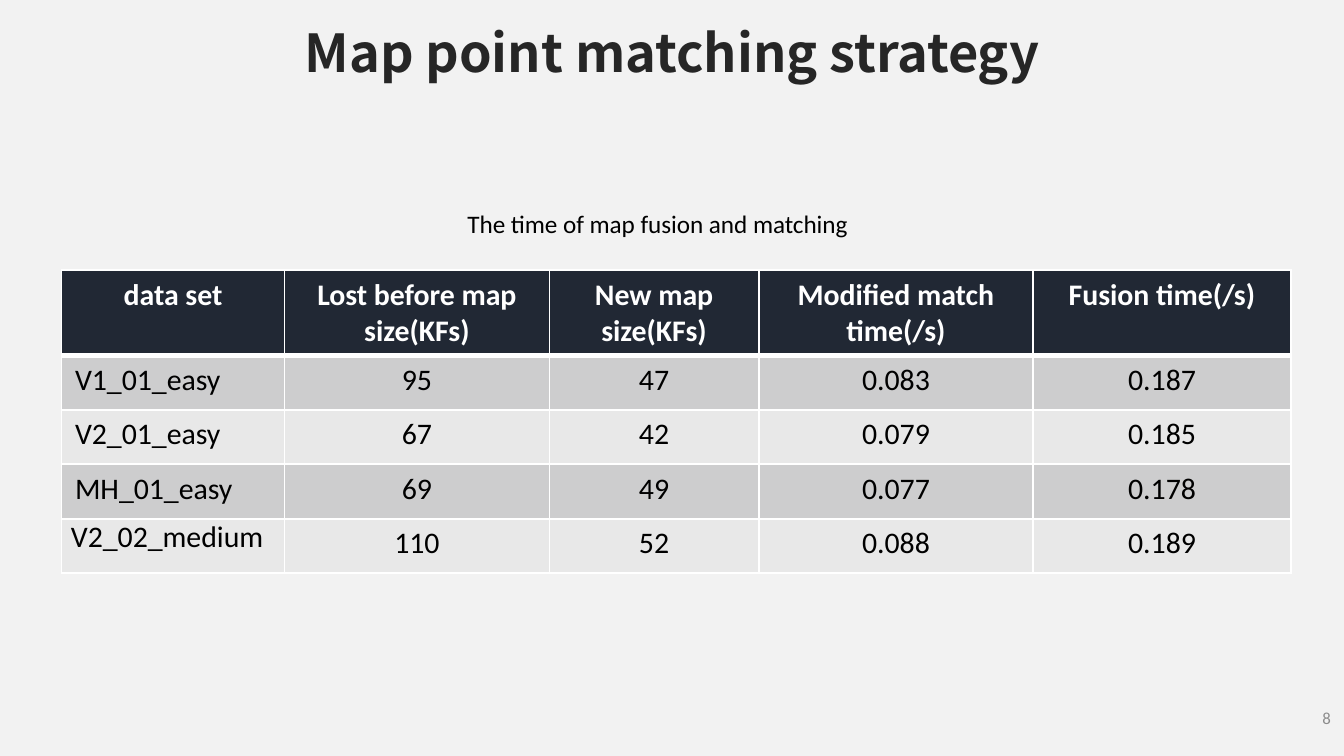
from lxml import etree
from pptx import Presentation
from pptx import util as u
from pptx.dml.color import RGBColor
from pptx.enum import text
from pptx.oxml import ns

INK = {"back": "F2F2F2", "title": "262626", "text": "000000", "page": "8C8C8C",
       "head": "212834", "odd": "CDCDCE", "even": "E8E8E8", "white": "FFFFFF"}
BODY = "Calibri"
ALIGN = text.PP_ALIGN
WIDTHS = [119.5, 141.8, 112.3, 146.9, 138.2]
HEAD, ROW = 45, 29.2
ROWS = [
    ["data set", "Lost before map size(KFs)", "New map size(KFs)",
     "Modified match time(/s)", "Fusion time(/s)"],
    ["V1_01_easy", "95", "47", "0.083", "0.187"],
    ["V2_01_easy", "67", "42", "0.079", "0.185"],
    ["MH_01_easy", "69", "49", "0.077", "0.178"],
    ["V2_02_medium", "110", "52", "0.088", "0.189"],
]


def paint(fill, ink):
    fill.solid()
    fill.fore_color.rgb = RGBColor.from_string(INK[ink])


def write(frame, words, size, ink, align, font=BODY, bold=False):
    para = frame.paragraphs[0]
    para.text = words
    para.alignment = align
    para.font.size = u.Pt(size)
    para.font.name = font
    para.font.bold = bold
    para.font.color.rgb = RGBColor.from_string(INK[ink])


def label(slide, box, words, size, ink, align=ALIGN.CENTER, wrap=False, **style):
    frame = slide.shapes.add_textbox(*map(u.Pt, box)).text_frame
    frame.word_wrap = wrap
    if wrap:
        frame.vertical_anchor = text.MSO_ANCHOR.MIDDLE
    else:
        frame.auto_size = text.MSO_AUTO_SIZE.SHAPE_TO_FIT_TEXT
    write(frame, words, size, ink, align, **style)


def border(cell, top, bottom):
    props = cell._tc.get_or_add_tcPr()
    sides = {"L": 1, "R": 1, "T": top, "B": bottom}
    for spot, (side, width) in enumerate(sides.items()):
        line = etree.Element(ns.qn(f"a:ln{side}"), w=str(u.Pt(width)))
        fill = etree.SubElement(line, ns.qn("a:solidFill"))
        etree.SubElement(fill, ns.qn("a:srgbClr"), val=INK["white"])
        props.insert(spot, line)


def grid(slide, left, top):
    high = HEAD + ROW * (len(ROWS) - 1)
    table = slide.shapes.add_table(
        len(ROWS), len(WIDTHS), u.Pt(left), u.Pt(top),
        u.Pt(sum(WIDTHS)), u.Pt(high)).table
    for col, width in zip(table.columns, WIDTHS):
        col.width = u.Pt(width)
    for r, row in enumerate(ROWS):
        first = r == 0
        table.rows[r].height = u.Pt(HEAD if first else ROW)
        for c, words in enumerate(row):
            cell = table.cell(r, c)
            align = ALIGN.LEFT if c == 0 and not first else ALIGN.CENTER
            write(cell.text_frame, words, 16, "white" if first else "text",
                  align, bold=first)
            paint(cell.fill, "head" if first else "odd" if r % 2 else "even")
            border(cell, 3 if r == 1 else 1, 3 if first else 1)
    last = table.cell(len(ROWS) - 1, 0)
    last.margin_left = last.margin_right = u.Pt(5)
    last.margin_top = last.margin_bottom = u.Pt(0)


def main():
    deck = Presentation()
    deck.slide_width, deck.slide_height = u.Pt(720), u.Pt(405)
    slide = deck.slides.add_slide(deck.slide_layouts[6])
    paint(slide.background.fill, "back")
    label(slide, (558, 373.7, 162, 21.6), "8", 9, "page", ALIGN.RIGHT, wrap=True)
    grid(slide, 33, 144.7)
    label(slide, (144.5, 7.2, 431, 41), "Map point matching strategy", 28, "title",
          font="Noto Sans CJK SC", bold=True)
    label(slide, (243.2, 108, 218, 23.8), "The time of map fusion and matching",
          13.5, "text")
    deck.save("out.pptx")


if __name__ == "__main__":
    main()
